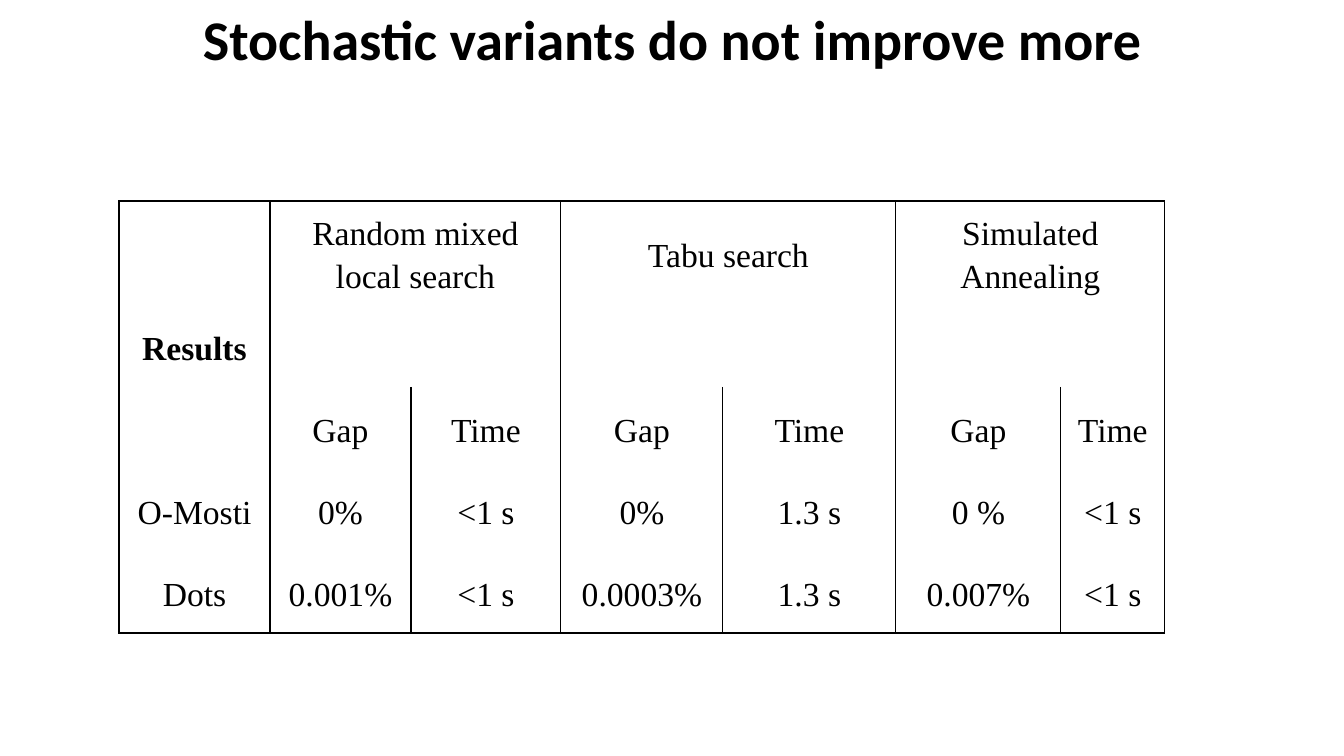
from lxml import etree
from pptx import Presentation
from pptx import util as u
from pptx.dml.color import RGBColor
from pptx.enum import text
from pptx.oxml import ns

PX = 914400 / 100.8
BLACK = "000000"
COLS = [151, 141, 150, 162, 173, 165, 104]
ROWS = [104, 82, 82, 82, 82]
METHODS = ["Random mixed local search", "Tabu search", "Simulated Annealing"]
CELLS = [
    ["", *(name for method in METHODS for name in (method, ""))],
    ["Results"] + [""] * 6,
    [""] + ["Gap", "Time"] * 3,
    ["O-Mosti", "0%", "<1 s", "0%", "1.3 s", "0 %", "<1 s"],
    ["Dots", "0.001%", "<1 s", "0.0003%", "1.3 s", "0.007%", "<1 s"],
]


def px(n):
    return u.Emu(round(n * PX))


def set_font(p, name, size, bold=False, color=BLACK):
    p.font.name, p.font.size, p.font.bold = name, u.Pt(size), bold
    p.font.color.rgb = RGBColor.from_string(color)
    p.alignment = text.PP_ALIGN.CENTER


def set_borders(cell, sides, color=BLACK):
    tcPr = cell._tc.get_or_add_tcPr()
    for side in "LRTB":
        ln = etree.SubElement(tcPr, ns.qn(f"a:ln{side}"), w=str(u.Pt(1)))
        if side in sides:
            fill = etree.SubElement(ln, ns.qn("a:solidFill"))
            etree.SubElement(fill, ns.qn("a:srgbClr"), val=color)
        else:
            etree.SubElement(ln, ns.qn("a:noFill"))


def add_title(s, x, y, w, h, title):
    sp = s.shapes.title
    sp.left, sp.top, sp.width, sp.height = map(px, (x, y, w, h))
    tf = sp.text_frame
    tf.text = title
    tf.auto_size = text.MSO_AUTO_SIZE.NONE
    tf.vertical_anchor = text.MSO_ANCHOR.MIDDLE
    set_font(tf.paragraphs[0], "Calibri", 40, True)


def fill_cell(cell, value):
    cell.vertical_anchor = text.MSO_ANCHOR.MIDDLE
    cell.fill.background()
    if value:
        cell.text = value
        p = cell.text_frame.paragraphs[0]
        p.line_spacing = 1.15
        set_font(p, "Times New Roman", 24, value == "Results")


def add_results(s, x, y):
    box = map(px, (x, y, sum(COLS), sum(ROWS)))
    table = s.shapes.add_table(len(ROWS), len(COLS), *box).table
    table.first_row = table.horz_banding = False
    for col, w in zip(table.columns, COLS):
        col.width = px(w)
    for row, h in zip(table.rows, ROWS):
        row.height = px(h)
    for r in range(2):
        for c in (1, 3, 5):
            table.cell(r, c).merge(table.cell(r, c + 1))
    for r, values in enumerate(CELLS):
        for c, value in enumerate(values):
            cell = table.cell(r, c)
            sides = "R" if cell.is_spanned else "LR"
            sides += "T" if r == 0 else "B" if r == len(ROWS) - 1 else ""
            set_borders(cell, sides)
            fill_cell(cell, value)


def main():
    prs = Presentation()
    prs.slide_width, prs.slide_height = px(1344), px(756)
    s = prs.slides.add_slide(prs.slide_layouts[5])
    add_title(s, 0, -1, 1344, 78, "Stochastic variants do not improve more")
    add_results(s, 119, 201)
    prs.save("out.pptx")


if __name__ == "__main__":
    main()
